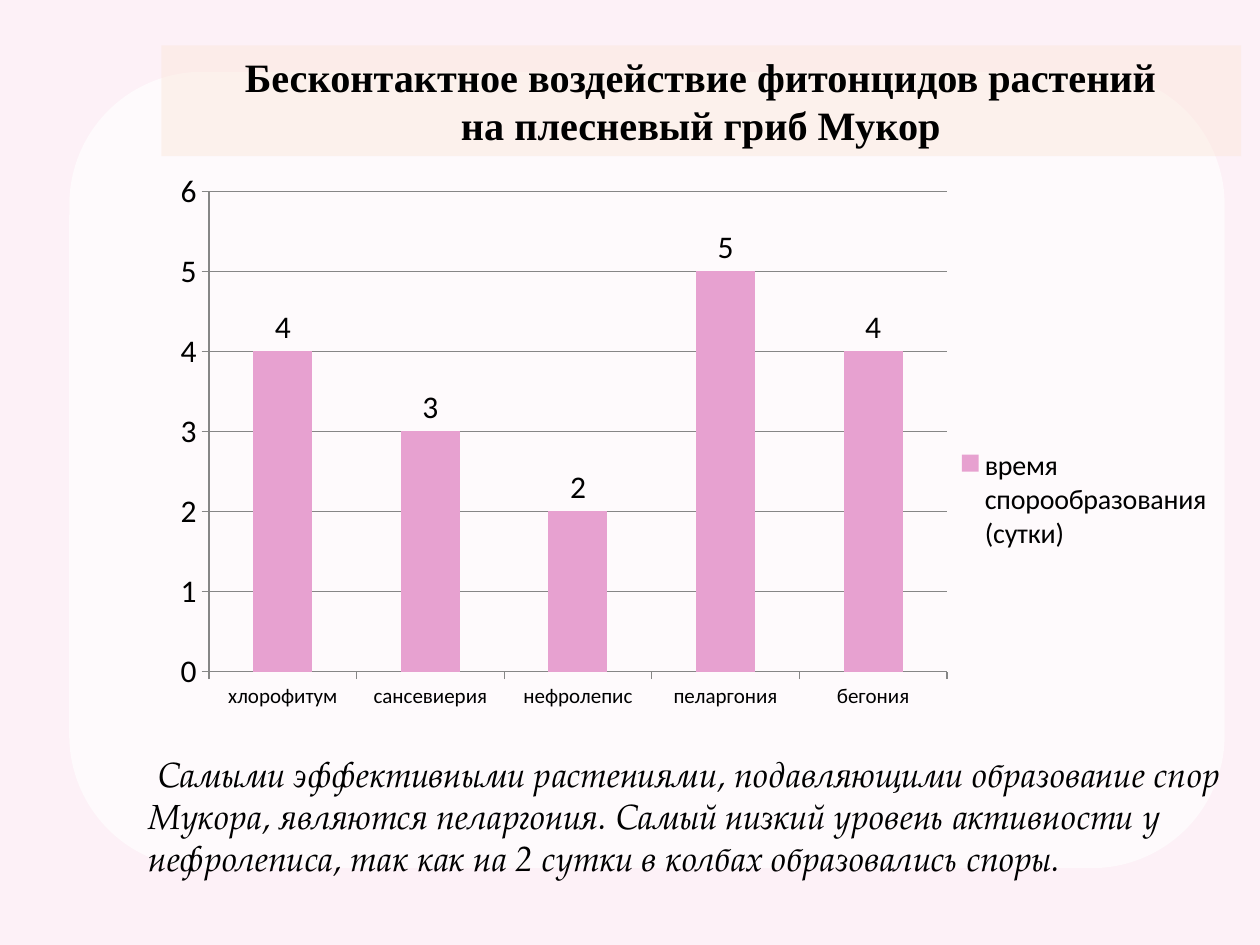
"""Build the slide on how plant phytoncides affect Mucor mould."""
from lxml import etree
from pptx import Presentation
from pptx.chart.data import CategoryChartData
from pptx.dml.color import RGBColor
from pptx.enum.chart import XL_CHART_TYPE as ChartType
from pptx.enum.chart import XL_LABEL_POSITION as LabelPosition
from pptx.enum.chart import XL_LEGEND_POSITION as LegendPosition
from pptx.enum.chart import XL_TICK_MARK as TickMark
from pptx.enum.shapes import MSO_SHAPE as Shape
from pptx.enum.text import MSO_ANCHOR as Anchor
from pptx.enum.text import MSO_AUTO_SIZE as AutoSize
from pptx.enum.text import PP_ALIGN as Align
from pptx.oxml.ns import qn
from pptx.util import Inches, Pt

BACKGROUND = RGBColor(0xFD, 0xF1, 0xF7)
WHITE = RGBColor(0xFF, 0xFF, 0xFF)
PEACH = RGBColor(0xFB, 0xE5, 0xD6)
PINK = RGBColor(0xE7, 0xA1, 0xD0)
GRAY = RGBColor(0x86, 0x86, 0x86)
BLACK = RGBColor(0, 0, 0)


def fill_translucent(shape, color, opacity):
    shape.fill.solid()
    shape.fill.fore_color.rgb = color
    tint = shape.fill._xPr.find(qn("a:solidFill"))[0]
    etree.SubElement(tint, qn("a:alpha"), val=str(opacity * 1000))


def format_font(font, color, **values):
    font.color.rgb = color
    for name, value in values.items():
        setattr(font, name, value)


prs = Presentation()
prs.slide_width, prs.slide_height = Inches(10), Inches(7.5)
slide = prs.slides.add_slide(prs.slide_layouts[5])
slide.background.fill.solid()
slide.background.fill.fore_color.rgb = BACKGROUND

panel = slide.shapes.add_shape(
    Shape.ROUNDED_RECTANGLE, Inches(0.55), Inches(0.57), Inches(9.17), Inches(6.32))
panel.shadow.inherit = False
panel.line.fill.background()
fill_translucent(panel, WHITE, 65)

plants = CategoryChartData()
plants.categories = ["хлорофитум", "сансевиерия", "нефролепис", "пеларгония", "бегония"]
plants.add_series("время спорообразования (сутки)", [4, 3, 2, 5, 4])
chart = slide.shapes.add_chart(
    ChartType.COLUMN_CLUSTERED, Inches(1.08), Inches(1.34), Inches(8.65), Inches(4.46),
    plants).chart
format_font(chart.font, BLACK, name="Calibri", size=Pt(18))
chart.has_title = False
chart.has_legend = True
chart.legend.position = LegendPosition.RIGHT
chart.legend.include_in_layout = False
format_font(chart.legend.font, BLACK, name="Calibri", size=Pt(16))

days, names = chart.value_axis, chart.category_axis
for axis in (days, names):
    axis.major_tick_mark = TickMark.OUTSIDE
    axis.format.line.color.rgb = GRAY
format_font(names.tick_labels.font, BLACK, name="Calibri", size=Pt(12))
days.minimum_scale, days.maximum_scale, days.major_unit = 0, 6, 1
days.major_gridlines.format.line.color.rgb = GRAY

columns = chart.plots[0]
columns.gap_width = 150
columns.vary_by_categories = False
columns.series[0].format.fill.solid()
columns.series[0].format.fill.fore_color.rgb = PINK
columns.has_data_labels = True
columns.data_labels.show_value = True
columns.data_labels.position = LabelPosition.OUTSIDE_END

plot_frame = {"layoutTarget": "inner", "xMode": "edge", "yMode": "edge",
              "x": 0.067, "y": 0.04, "w": 0.677, "h": 0.855}
legend_frame = {"xMode": "edge", "yMode": "edge",
                "x": 0.75, "y": 0.48, "w": 0.24, "h": 0.22}
for part, index, frame in (("plotArea", 0, plot_frame), ("legend", 1, legend_frame)):
    area = chart.element.find(".//" + qn(f"c:{part}"))
    for old_layout in area.findall(qn("c:layout")):
        area.remove(old_layout)
    layout = etree.Element(qn("c:layout"))
    area.insert(index, layout)
    manual = etree.SubElement(layout, qn("c:manualLayout"))
    for tag, value in frame.items():
        etree.SubElement(manual, qn(f"c:{tag}"), val=str(value))

title = slide.shapes.title
title.left, title.top = Inches(1.28), Inches(0.36)
title.width, title.height = Inches(8.57), Inches(0.88)
fill_translucent(title, PEACH, 40)
slide.shapes[-1].element.addnext(title.element)
title.text_frame.text = "Бесконтактное воздействие фитонцидов растений\nна плесневый гриб Мукор"
title.text_frame.auto_size = AutoSize.NONE
title.text_frame.vertical_anchor = Anchor.MIDDLE
for line in title.text_frame.paragraphs:
    line.alignment = Align.CENTER
    format_font(line.font, BLACK, name="Times New Roman", size=Pt(23), bold=True)

conclusion = slide.shapes.add_textbox(
    Inches(1.08), Inches(5.92), Inches(8.92), Inches(1.11)).text_frame
conclusion.word_wrap = True
conclusion.text = (
    "Самыми эффективными растениями, подавляющими образование спор Мукора, "
    "являются пеларгония. Самый низкий уровень активности у нефролеписа, "
    "так как на 2 сутки в колбах образовались споры.")
finding = conclusion.paragraphs[0]
finding._p.get_or_add_pPr().set("indent", str(Inches(0.07)))
format_font(finding.font, BLACK, name="TeX Gyre Pagella", size=Pt(20), italic=True)

prs.save("out.pptx")
